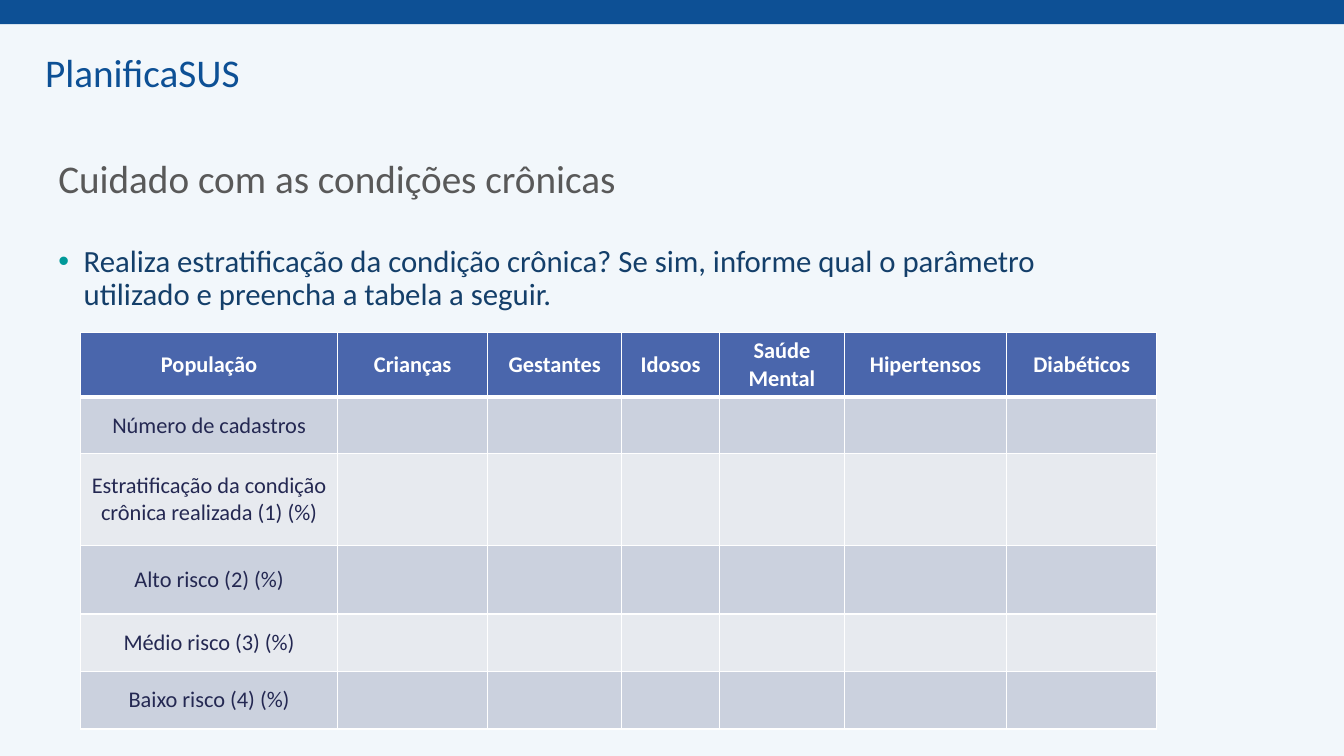
from lxml.etree import SubElement
from pptx import Presentation
from pptx.dml.color import RGBColor
from pptx.enum.shapes import MSO_SHAPE
from pptx.enum.text import MSO_ANCHOR, PP_ALIGN
from pptx.oxml.ns import qn
from pptx.util import Cm, Pt

COLORS = {
    "background": "F2F7FB",
    "bar": "0D5095",
    "title": "595959",
    "body": "143F6A",
    "bullet": "009999",
    "header": "4A66AC",
    "band_dark": "CBD1DE",
    "band_light": "E7EAEF",
    "cell_text": "242852",
    "white": "FFFFFF",
}
HEADERS = ["População", "Crianças", "Gestantes", "Idosos", "Saúde Mental",
           "Hipertensos", "Diabéticos"]
ROW_LABELS = ["Número de cadastros",
              "Estratificação da condição crônica realizada (1) (%)",
              "Alto risco (2) (%)", "Médio risco (3) (%)", "Baixo risco (4) (%)"]
COL_WIDTHS = [6.48, 3.78, 3.38, 2.46, 3.15, 4.09, 3.78]
ROW_HEIGHTS = [1.63, 1.42, 2.31, 1.73, 1.45, 1.45]


def rgb(name):
    return RGBColor.from_string(COLORS[name])


def apply(target, values):
    for key, value in values.items():
        setattr(target, key, value)


class SlideBuilder:
    font = "Calibri"

    def __init__(self, prs):
        self.s = prs.slides.add_slide(prs.slide_layouts[6])
        self.fill(self.s.background, "background")

    def fill(self, target, color):
        target.fill.solid()
        target.fill.fore_color.rgb = rgb(color)

    def run(self, p, text, size, color, bold=False):
        r = p.add_run()
        r.text = text
        apply(r.font, {"name": self.font, "size": Pt(size), "bold": bold})
        r.font.color.rgb = rgb(color)

    def rect(self, box, color):
        sp = self.s.shapes.add_shape(MSO_SHAPE.RECTANGLE, *map(Cm, box))
        sp.shadow.inherit = False
        self.fill(sp, color)
        sp.line.fill.background()

    def text(self, box, text, size, color, bullet=None, spacing=0.9, **frame):
        tf = self.s.shapes.add_textbox(*map(Cm, box)).text_frame
        apply(tf, {"word_wrap": True, **frame})
        p = tf.paragraphs[0]
        p.line_spacing = spacing
        if bullet:
            self.bullet(p, bullet)
        self.run(p, text, size, color)

    def bullet(self, p, color):
        pPr = p._p.get_or_add_pPr()
        pPr.set("marL", str(Cm(0.64)))
        pPr.set("indent", str(-Cm(0.64)))
        clr = SubElement(pPr, qn("a:buClr"))
        SubElement(clr, qn("a:srgbClr"), val=COLORS[color])
        SubElement(pPr, qn("a:buFont"), typeface="Arial")
        SubElement(pPr, qn("a:buChar"), char="•")

    def borders(self, cell, widths):
        tcPr = cell._tc.get_or_add_tcPr()
        for side, width in zip("LRTB", widths):
            ln = SubElement(tcPr, qn(f"a:ln{side}"), w=str(Pt(width)))
            solid = SubElement(ln, qn("a:solidFill"))
            SubElement(solid, qn("a:srgbClr"), val=COLORS["white"])

    def table(self, left, top, widths, heights, rows):
        tbl = self.s.shapes.add_table(
            len(heights), len(widths), Cm(left), Cm(top),
            Cm(sum(widths)), Cm(sum(heights))).table
        for col, width in zip(tbl.columns, widths):
            col.width = Cm(width)
        for i, (row, height) in enumerate(zip(tbl.rows, heights)):
            row.height = Cm(height)
            header = i == 0
            band = "header" if header else ("band_light", "band_dark")[i % 2]
            for cell, text in zip(row.cells, rows[i]):
                self.borders(cell, (1, 1, 3 if i == 1 else 1, 3 if header else 1))
                self.fill(cell, band)
                apply(cell, {"vertical_anchor": MSO_ANCHOR.MIDDLE,
                             "margin_left": Cm(0.2), "margin_right": Cm(0.2)})
                if text:
                    p = cell.text_frame.paragraphs[0]
                    p.alignment = PP_ALIGN.CENTER
                    self.run(p, text, 16, "white" if header else "cell_text", header)


def main():
    prs = Presentation()
    apply(prs, {"slide_width": Cm(33.87), "slide_height": Cm(19.05)})
    slide = SlideBuilder(prs)
    slide.rect((0, 0, 33.87, 0.61), "bar")
    slide.text((0.89, 1.09, 5.46, 1.45), "PlanificaSUS", 28, "bar",
               spacing=1.0, word_wrap=False)
    slide.text((1.22, 2.72, 27.91, 3.68), "Cuidado com as condições crônicas",
               28, "title", vertical_anchor=MSO_ANCHOR.MIDDLE)
    slide.text((1.22, 6.07, 27.91, 2.74),
               "Realiza estratificação da condição crônica? Se sim, informe qual o "
               "parâmetro utilizado e preencha a tabela a seguir.",
               22, "body", bullet="bullet")
    blanks = [""] * (len(HEADERS) - 1)
    rows = [HEADERS] + [[label] + blanks for label in ROW_LABELS]
    slide.table(2.03, 8.38, COL_WIDTHS, ROW_HEIGHTS, rows)
    prs.save("out.pptx")


if __name__ == "__main__":
    main()
